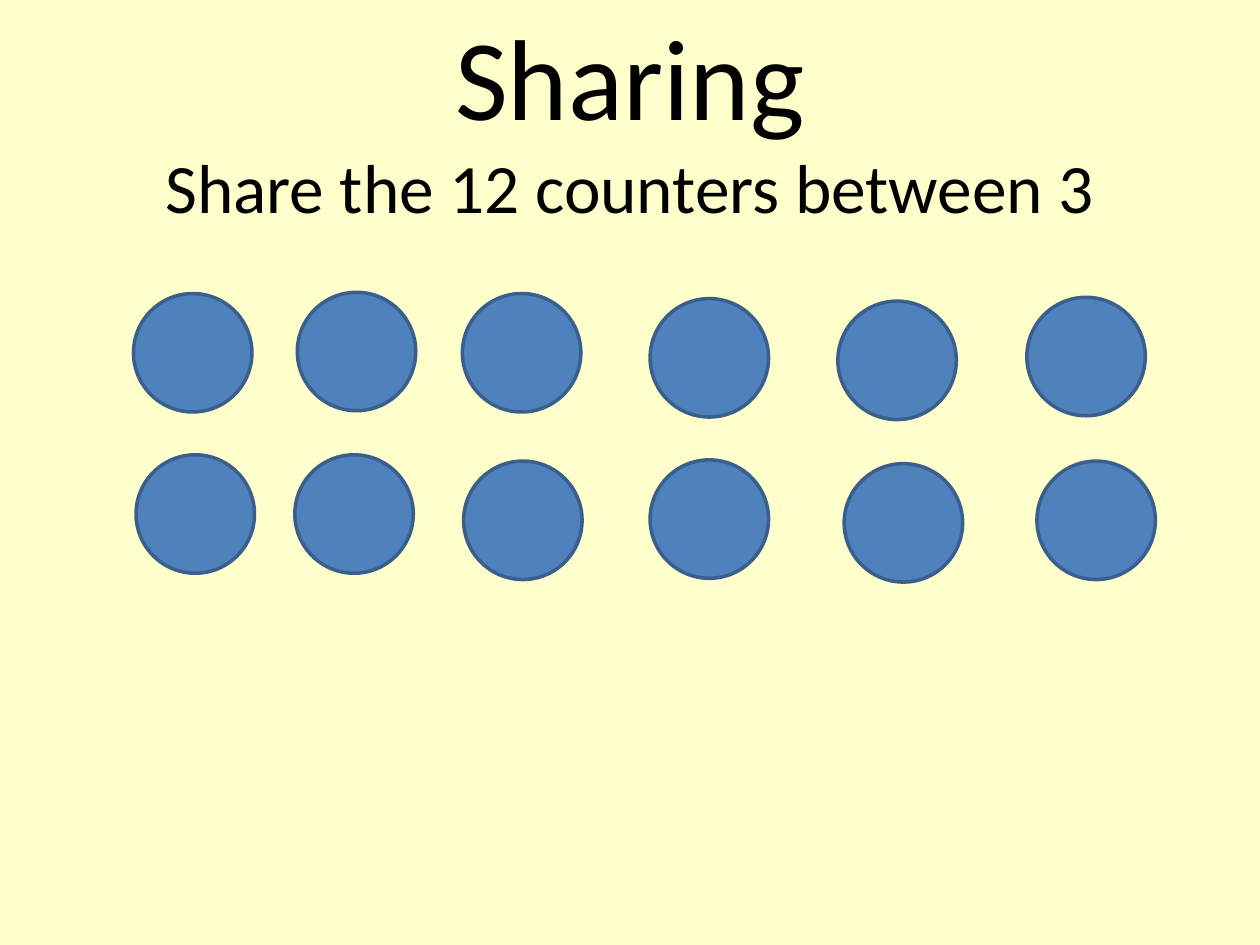
from pptx import Presentation
from pptx.dml.color import RGBColor
from pptx.enum.shapes import MSO_SHAPE
from pptx.enum.text import MSO_ANCHOR, MSO_AUTO_SIZE, PP_ALIGN
from pptx.util import Inches, Pt

CREAM = RGBColor(0xFF, 0xFF, 0xCC)
BLACK = RGBColor(0x00, 0x00, 0x00)
BLUE = RGBColor(0x4F, 0x81, 0xBD)
DARK_BLUE = RGBColor(0x3A, 0x5F, 0x8C)

DIAMETER = 0.94
# Hand-placed counters: (left, top) in inches from the corner of their box.
COUNTER_ROWS = [
    [(0, 0.01), (1.3, 0), (2.61, 0.01), (4.1, 0.05), (5.59, 0.07), (7.09, 0.04)],
    [(0.02, 1.29), (1.28, 1.29), (2.62, 1.34), (4.1, 1.33), (5.64, 1.36), (7.17, 1.34)],
]


def add_heading(page, left, top, width, height):
    title = page.shapes.title
    title.left, title.top = Inches(left), Inches(top)
    title.width, title.height = Inches(width), Inches(height)
    frame = title.text_frame
    frame.word_wrap = True
    frame.auto_size = MSO_AUTO_SIZE.NONE
    frame.vertical_anchor = MSO_ANCHOR.MIDDLE
    para = frame.paragraphs[0]
    para.text = "Sharing\vShare the 12 counters between 3"
    para.alignment = PP_ALIGN.CENTER
    para.font.name = "Calibri"
    para.font.color.rgb = BLACK
    for span, size in zip(para.runs, (65.7, 39.6)):
        span.font.size = Pt(size)


def add_counters(page, left, top):
    for row in COUNTER_ROWS:
        for across, down in row:
            counter = page.shapes.add_shape(
                MSO_SHAPE.OVAL, Inches(left + across), Inches(top + down),
                Inches(DIAMETER), Inches(DIAMETER))
            counter.shadow.inherit = False
            counter.fill.solid()
            counter.fill.fore_color.rgb = BLUE
            counter.line.color.rgb = DARK_BLUE
            counter.line.width = Pt(2)


def main():
    deck = Presentation()
    deck.slide_width, deck.slide_height = Inches(10), Inches(7.5)
    page = deck.slides.add_slide(deck.slide_layouts.get_by_name("Title Only"))
    page.background.fill.solid()
    page.background.fill.fore_color.rgb = CREAM
    add_heading(page, 0.5, 0.3, 9, 1.25)
    add_counters(page, 1.06, 2.32)
    deck.save("out.pptx")


if __name__ == "__main__":
    main()
